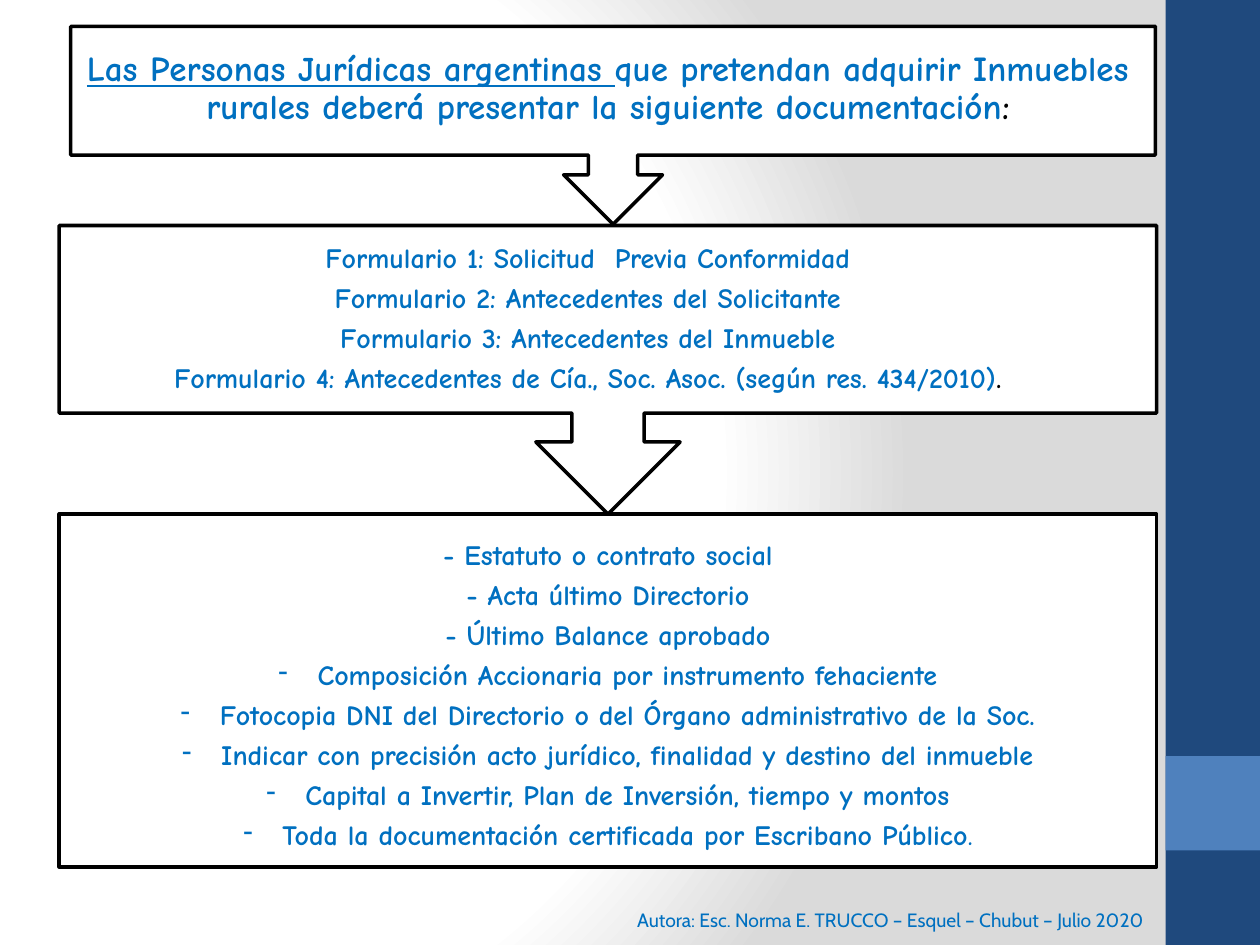
from dataclasses import dataclass

from lxml.etree import SubElement
from pptx import Presentation
from pptx.dml.color import RGBColor
from pptx.enum.shapes import MSO_SHAPE as Preset
from pptx.enum.text import MSO_ANCHOR as Anchor, PP_ALIGN as Align
from pptx.oxml import parse_xml
from pptx.oxml.ns import nsdecls, qn
from pptx.util import Inches, Pt


@dataclass(frozen=True)
class Theme:
    text: str = "0070C0"
    black: str = "000000"
    white: str = "FFFFFF"
    shade: str = "DADADA"
    navy: str = "1F497D"
    blue: str = "4F81BD"
    body_font: str = "Comic Neue"
    footer_font: str = "Cabin"
    title_size: int = 20
    body_size: int = 16
    stop_size: int = 14
    footer_size: int = 11
    outline: int = 2


THEME = Theme()
LEFT, WIDTH = 0.47, 8.71

TITLE = [
    "Las Personas Jurídicas argentinas ",
    "que pretendan adquirir Inmuebles rurales deberá presentar la siguiente documentación",
    ":",
]
FORMS = [
    ["Formulario 1: Solicitud  Previa Conformidad"],
    ["Formulario 2: Antecedentes del Solicitante"],
    ["Formulario 3: Antecedentes del Inmueble"],
    ["Formulario 4: Antecedentes de Cía., Soc. Asoc. (según res. 434/2010)", "."],
]
PLAIN_ITEMS = [
    ["- Estatuto o contrato social"],
    ["- Acta último Directorio"],
    ["- Último Balance aprobado"],
]
BULLET_ITEMS = [
    ["Composición Accionaria por instrumento fehaciente"],
    ["Fotocopia DNI del Directorio o del Órgano administrativo de la Soc."],
    ["Indicar con precisión acto jurídico, finalidad y destino del inmueble"],
    ["Capital a Invertir, Plan de Inversión, tiempo y montos"],
    ["Toda la documentación certificada por Escribano Público", "."],
]
FOOTER = "Autora: Esc. Norma E. TRUCCO – Esquel – Chubut – Julio 2020"


def rgb(value):
    return RGBColor.from_string(value)


def set_background(slide):
    """Radial gradient that is white on the left and shaded on the right."""
    stops = "".join(
        f'<a:gs pos="{position * 1000}"><a:srgbClr val="{color}"/></a:gs>'
        for position, color in ((0, THEME.white), (75, THEME.white), (100, THEME.shade))
    )
    background = parse_xml(
        f'<p:bg {nsdecls("p", "a")}><p:bgPr><a:gradFill rotWithShape="1">'
        f'<a:gsLst>{stops}</a:gsLst><a:path path="circle">'
        '<a:fillToRect l="20000" t="50000" r="100000" b="50000"/></a:path>'
        "</a:gradFill><a:effectLst/></p:bgPr></p:bg>"
    )
    slide.element.cSld.insert(0, background)


def add_panel(shapes, preset, box, fill, outlined=False):
    shape = shapes.add_shape(preset, *map(Inches, box))
    shape.shadow.inherit = False
    shape.fill.solid()
    shape.fill.fore_color.rgb = rgb(fill)
    if outlined:
        shape.line.color.rgb = rgb(THEME.black)
        shape.line.width = Pt(THEME.outline)
    else:
        shape.line.fill.background()
    return shape


def prepare_frame(shape, inset_x=0.1, inset_y=0.05):
    frame = shape.text_frame
    frame.word_wrap = True
    frame.vertical_anchor = Anchor.MIDDLE
    frame.margin_left = frame.margin_right = Inches(inset_x)
    frame.margin_top = frame.margin_bottom = Inches(inset_y)
    return frame


def style_font(font, name, size, bold):
    font.name, font.size, font.bold = name, Pt(size), bold
    font.color.rgb = rgb(THEME.text)


def write_paragraphs(frame, paragraphs, size):
    for index, runs in enumerate(paragraphs):
        paragraph = frame.add_paragraph() if index else frame.paragraphs[0]
        paragraph.alignment = Align.CENTER
        paragraph.line_spacing = 0.9
        paragraph.space_after = Pt(size * 0.35)
        style_font(paragraph.font, THEME.body_font, size, True)
        for text in runs:
            paragraph.add_run().text = text


def add_dash(paragraph):
    properties = paragraph._p.get_or_add_pPr()
    properties.set("marL", str(Inches(0.31)))
    properties.set("indent", str(-Inches(0.31)))
    bullet = SubElement(properties, qn("a:buChar"))
    bullet.set("char", "-")
    properties.find(qn("a:defRPr")).addprevious(bullet)


def add_callout(slide, callout_box, text_box, inset, paragraphs, size):
    """Box with an arrow to the next step, grouped with its text."""
    group = slide.shapes.add_group_shape()
    callout = add_panel(group.shapes, Preset.UP_ARROW_CALLOUT, callout_box, THEME.white, True)
    callout.rotation = 180
    frame = prepare_frame(group.shapes.add_textbox(*map(Inches, text_box)), inset, inset)
    write_paragraphs(frame, paragraphs, size)
    frame.paragraphs[-1].runs[-1].font.color.rgb = rgb(THEME.black)
    return frame


def add_documents(slide):
    panel = add_panel(slide.shapes, Preset.RECTANGLE, (LEFT, 4.08, WIDTH, 2.8), THEME.white, True)
    frame = prepare_frame(panel)
    frame.margin_top = Inches(0.15)
    write_paragraphs(frame, PLAIN_ITEMS + BULLET_ITEMS, THEME.body_size)
    for paragraph in frame.paragraphs[len(PLAIN_ITEMS):]:
        add_dash(paragraph)
    frame.paragraphs[-1].runs[-1].font.size = Pt(THEME.stop_size)


def add_footer(slide):
    frame = prepare_frame(slide.shapes.add_textbox(*map(Inches, (3.35, 7.1, 5.83, 0.4))))
    paragraph = frame.paragraphs[0]
    paragraph.text = FOOTER
    paragraph.alignment = Align.RIGHT
    style_font(paragraph.font, THEME.footer_font, THEME.footer_size, False)


def main():
    presentation = Presentation()
    presentation.slide_width, presentation.slide_height = Inches(10), Inches(7.5)
    slide = presentation.slides.add_slide(presentation.slide_layouts[6])
    set_background(slide)
    add_panel(slide.shapes, Preset.RECTANGLE, (9.25, 0, 0.75, 7.5), THEME.navy)
    add_panel(slide.shapes, Preset.RECTANGLE, (9.25, 6, 0.75, 0.75), THEME.blue)
    add_footer(slide)

    title = add_callout(slide, (0.56, 0.21, 8.61, 1.57), (LEFT, 0.2, WIDTH, 1.02),
                        0.16, [TITLE], THEME.title_size)
    title.paragraphs[0].runs[0].font.underline = True
    forms = add_callout(slide, (LEFT, 1.79, WIDTH, 2.29), (LEFT, 1.79, WIDTH, 1.49),
                        0.12, FORMS, THEME.body_size)
    forms.paragraphs[0]._p.get_or_add_pPr().set("marR", str(Inches(0.32)))
    add_documents(slide)
    presentation.save("out.pptx")


if __name__ == "__main__":
    main()
